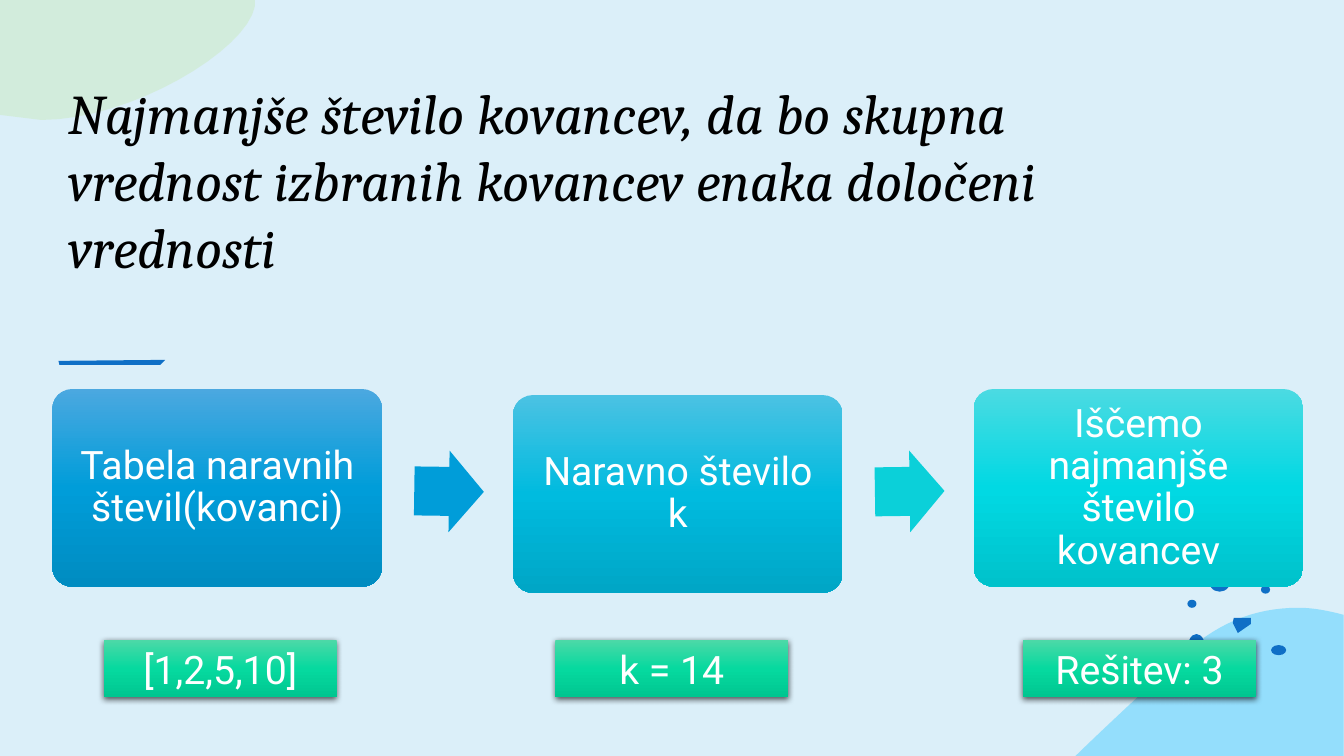
from copy import deepcopy
from dataclasses import dataclass

from lxml import etree
from pptx import Presentation
from pptx import util as u
from pptx.dml.color import RGBColor
from pptx.enum import shapes, text
from pptx.oxml.ns import qn

PX = 9144  # EMU in one px, 100 px to the inch


@dataclass(frozen=True)
class Theme:
    back: str = "DBEFF9"
    ink: str = "0F6FC6"
    sky: str = "4FCEFF"
    leaf: str = "CBEAC0"
    black: str = "000000"
    white: str = "FFFFFF"
    green: tuple = ("4CD9A7", "06D99F", "00C690")
    serif: str = "Cambria"
    sans: str = "Roboto"
    title: int = 40
    body: int = 28


@dataclass(frozen=True)
class Box:
    left: int
    top: int
    width: int
    height: int

    def emu(self) -> list:
        return [px(v) for v in (self.left, self.top, self.width, self.height)]


@dataclass(frozen=True)
class Blob:
    """Outline: each leg is a line end (2 numbers) or a cubic curve (6)."""
    color: str
    start: tuple
    legs: tuple
    alpha: int = 100


@dataclass(frozen=True)
class Step:
    label: str
    top: int
    shades: tuple
    sample: str
    left: int  # left edge of the sample


@dataclass(frozen=True)
class Arrow:
    color: str
    turn: float


T = Theme()
TITLE = ("Najmanjše število kovancev, da bo skupna vrednost "
         "izbranih kovancev enaka določeni vrednosti")
STEPS = (
    Step("Tabela naravnih števil(kovanci)", 386,
         ("4BA8E0", "009DD9", "008CC1"), "[1,2,5,10]", 103),
    Step("Naravno število k", 392,
         ("4BC2E3", "00BBDF", "00A6C6"), "k = 14", 551),
    Step("Iščemo najmanjše število kovancev", 386,
         ("4BDAE2", "01D9E3", "00C2CB"), "Rešitev: 3", 1015),
)
ARROWS = (Arrow("009DD9", 0.8), Arrow("0BD0D9", 359.2))
PITCH = 457
BLOBS = (
    # Corner waves
    Blob(T.sky, (1067, 750), (
        (1102, 716, 1137, 684, 1169, 654), (1206, 618, 1245, 603, 1288, 603),
        (1303, 603, 1318, 606, 1333, 610), (1333, 750)), 50),
    Blob(T.leaf, (0, 0), (
        (253, 0), (253, 6), (245, 50, 130, 119, 41, 119), (0, 114)), 50),
    # Three-sided speck
    Blob(T.ink, (1224, 613), (
        (1241, 613), (1241, 619), (1228, 628), (1223, 618))),
    # Brush stroke under the title
    Blob(T.ink, (58, 358), ((164, 357), (159, 362), (59, 362))),
)
SPECKS = (Box(1206, 644, 14, 13), Box(1179, 629, 16, 22), Box(1261, 640, 15, 10),
          Box(1200, 569, 20, 18), Box(1251, 581, 9, 8), Box(1178, 595, 9, 8))


def px(size: float) -> int:
    return round(size * PX)


def rgb(color: str) -> RGBColor:
    return RGBColor.from_string(color)


def trace(blob: Blob, cuts: int = 16) -> list:
    """Turn the legs of a blob into points in EMU."""
    points, here = [], blob.start
    for leg in blob.legs:
        if len(leg) == 2:
            points.append(leg)
        else:
            knots = (here, leg[:2], leg[2:4], leg[4:])
            for i in range(1, cuts + 1):
                t = i / cuts
                parts = ((1 - t) ** 3, 3 * t * (1 - t) ** 2,
                         3 * t * t * (1 - t), t ** 3)
                points.append(tuple(sum(w * k[axis] for w, k in zip(parts, knots))
                                    for axis in (0, 1)))
        here = leg[-2:]
    return [(px(x), px(y)) for x, y in points]


def paint(shape, color: str, alpha: int = 100) -> None:
    shape.shadow.inherit = False
    shape.line.fill.background()
    shape.fill.solid()
    shape.fill.fore_color.rgb = rgb(color)
    if alpha < 100:
        tone = shape._element.spPr.find(".//" + qn("a:srgbClr"))
        etree.SubElement(tone, qn("a:alpha"), val=str(alpha * 1000))


def shade(shape, colors: tuple) -> None:
    """Fill from top to bottom with three even stops."""
    shape.shadow.inherit = False
    shape.line.fill.background()
    shape.fill.gradient()
    shape.fill.gradient_angle = 270
    stops = shape._element.spPr.find(".//" + qn("a:gsLst"))
    stops.append(deepcopy(stops[0]))
    for i, (stop, color) in enumerate(zip(shape.fill.gradient_stops, colors)):
        stop.color.rgb = rgb(color)
        stop.position = i / 2


def lift(shape) -> None:
    """Add a soft shadow below the shape."""
    effects = shape._element.spPr.find(qn("a:effectLst"))
    cast = etree.SubElement(effects, qn("a:outerShdw"), blurRad=str(u.Pt(4.5)),
                            dist=str(u.Pt(1.5)), dir="5400000", rotWithShape="0")
    tone = etree.SubElement(cast, qn("a:srgbClr"), val=T.black)
    etree.SubElement(tone, qn("a:alpha"), val="63000")


def write(shape, words: str, size: int, face: str, color: str,
          align=text.PP_ALIGN.CENTER, anchor=text.MSO_ANCHOR.MIDDLE,
          slant: bool = False, space: float = 1.0) -> None:
    frame = shape.text_frame
    frame.word_wrap = True
    frame.auto_size = text.MSO_AUTO_SIZE.NONE
    frame.vertical_anchor = anchor
    para = frame.paragraphs[0]
    para.alignment, para.line_spacing = align, space
    run = para.add_run()
    run.text = words
    run.font.size, run.font.name, run.font.italic = u.Pt(size), face, slant
    run.font.color.rgb = rgb(color)


def main() -> None:
    deck = Presentation()
    deck.slide_width, deck.slide_height = px(1333.33), px(750)
    slide = deck.slides.add_slide(deck.slide_layouts[5])
    slide.background.fill.solid()
    slide.background.fill.fore_color.rgb = rgb(T.back)
    items = slide.shapes
    kinds = shapes.MSO_SHAPE

    # Backdrop
    for blob in BLOBS:
        pen = items.build_freeform(*(px(v) for v in blob.start), scale=1.0)
        pen.add_line_segments(trace(blob), close=True)
        paint(pen.convert_to_shape(), blob.color, blob.alpha)
    for speck in SPECKS:
        paint(items.add_shape(kinds.OVAL, *speck.emu()), T.ink)

    # Title, raised above the backdrop
    title = items.title
    title.left, title.top, title.width, title.height = Box(58, 67, 1102, 216).emu()
    write(title, TITLE, T.title, T.serif, T.black, text.PP_ALIGN.LEFT,
          text.MSO_ANCHOR.BOTTOM, slant=True)
    items._spTree.append(title._element)

    # Steps
    for i, step in enumerate(STEPS):
        card = items.add_shape(kinds.ROUNDED_RECTANGLE,
                               *Box(52 + i * PITCH, step.top, 327, 196).emu())
        card.adjustments[0] = 0.1
        shade(card, step.shades)
        frame = card.text_frame
        frame.margin_left = frame.margin_right = px(18)
        frame.margin_top = frame.margin_bottom = px(18)
        write(card, step.label, T.body, T.sans, T.white, space=0.9)

    # Arrows between the steps
    for i, arrow in enumerate(ARROWS):
        mark = items.add_shape(kinds.RIGHT_ARROW,
                               *Box(411 + i * PITCH, 447, 69, 81).emu())
        mark.adjustments[0], mark.adjustments[1] = 0.6, 0.5
        mark.rotation = arrow.turn
        paint(mark, arrow.color)

    # Sample values
    for step in STEPS:
        tag = items.add_shape(kinds.RECTANGLE, *Box(step.left, 635, 231, 57).emu())
        shade(tag, T.green)
        lift(tag)
        write(tag, step.sample, T.body, T.sans, T.white)

    deck.save("out.pptx")


if __name__ == "__main__":
    main()
